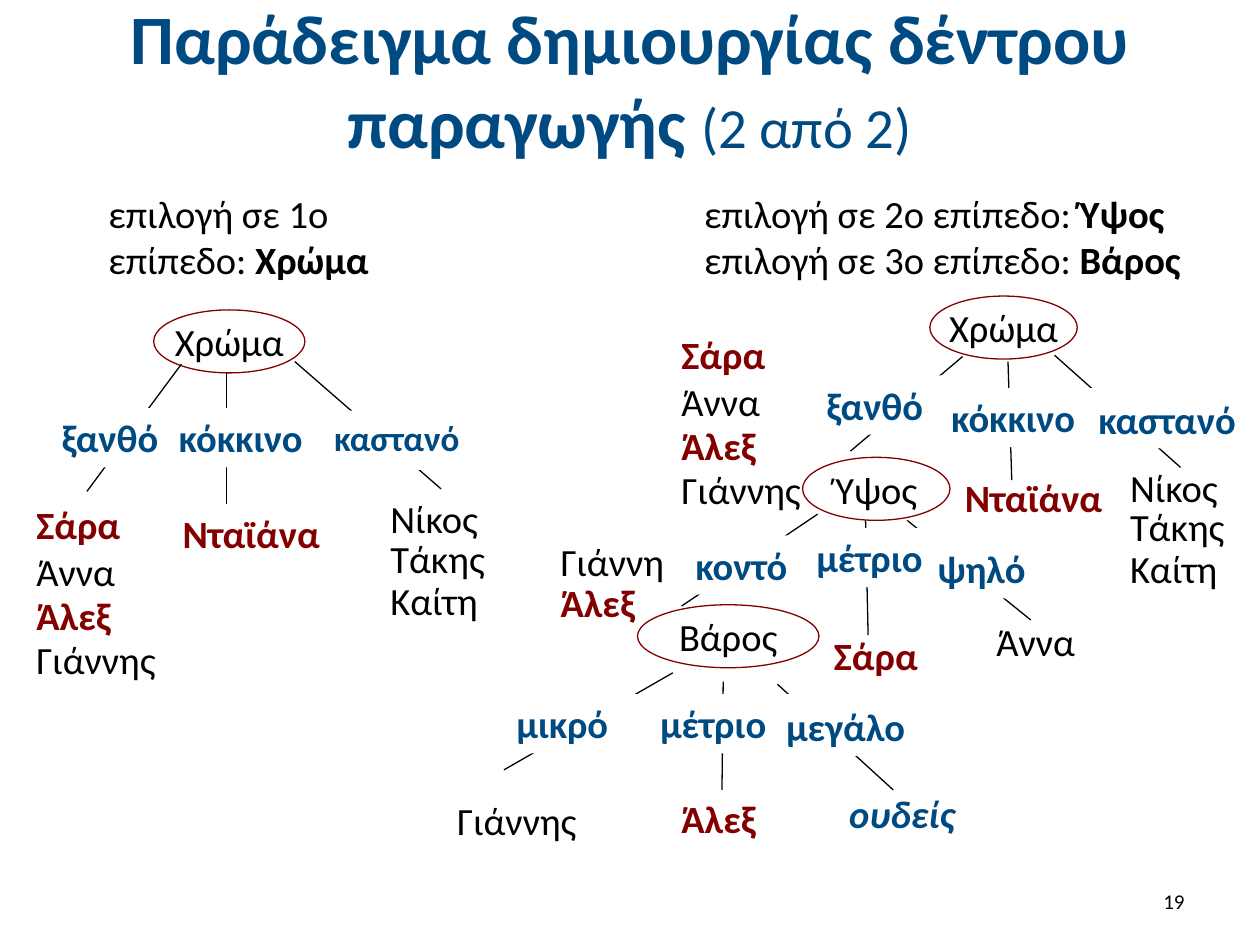
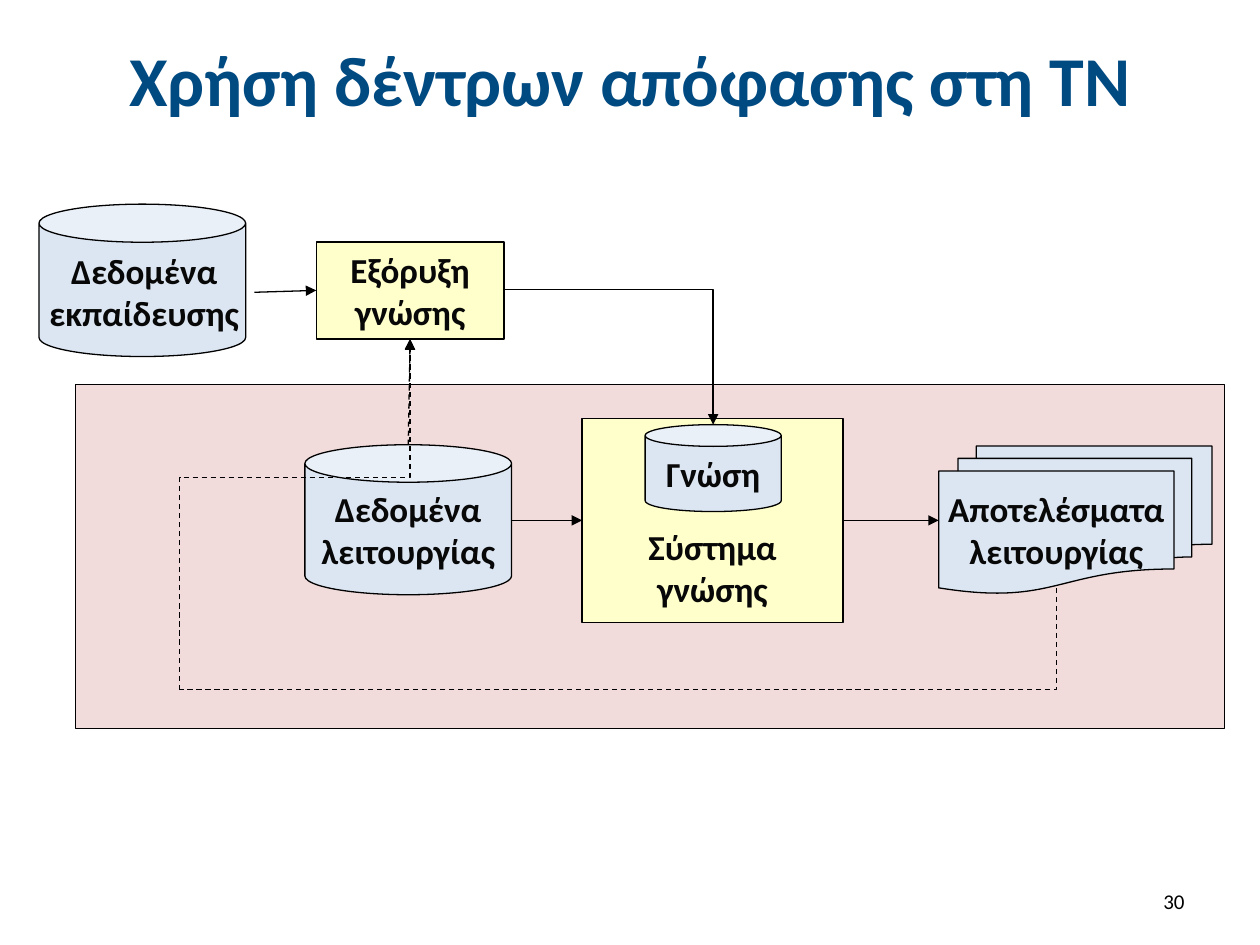
import pptx
import pptx.dml.color
import pptx.enum.dml
import pptx.enum.shapes
import pptx.enum.text
import pptx.oxml.ns
import pptx.oxml.xmlchemy
import pptx.util

EMU_PER_PX = 9144
BLUE, RED, BLACK, INK = "004A82", "820000", "000000", "080808"
WHITE, YELLOW, PINK, PALE_BLUE = "FFFFFF", "FFFFCC", "F2DCDB", "DCE6F2"
SHAPES = pptx.enum.shapes.MSO_SHAPE
CONNECTORS = pptx.enum.shapes.MSO_CONNECTOR
ANCHOR = pptx.enum.text.MSO_ANCHOR
ALIGN = pptx.enum.text.PP_ALIGN
TITLE_FORMAT = {"size": 40, "color": BLUE, "bold": True}
PLAIN_FORMAT = {"size": 22, "color": BLACK}
BOLD_FORMAT = {**PLAIN_FORMAT, "bold": True}
BRANCH_FORMAT = {"size": 22, "color": BLUE, "bold": True}
BOX_FORMAT = {"size": 20, "color": INK, "bold": True}
RED_NAMES = {"Σάρα", "Άλεξ", "Νταϊάνα"}

LONG_LIST = [("Σάρα", 0.8), ("Άννα", 0.5), ("Άλεξ", 0.5), ("Γιάννης", 0.5)]
SHORT_LIST = [("Νίκος", 1), ("Τάκης", 0.3), ("Καίτη", 0.5)]
DIANA = [("Νταϊάνα", 1)]

TREES = [
    {
        "box": (122, 246, 120, 50), "root": "Χρώμα",
        "edges": [(-53, 144, 22, 43), (58, 50, 58, 154), (112, 41, 228, 142)],
        "branches": [("ξανθό", -83, 78, 108, {}), ("κόκκινο", 10, 78, 126, {}),
                     ("καστανό", 130, 80, 126, {"size": 20})],
        "leaves": [(LONG_LIST, -103, 154, 120, 151), (DIANA, 13, 154, 132, 47),
                   (SHORT_LIST, 178, 142, 108, 114)],
    },
    {
        "box": (738, 235, 117, 50), "root": "Χρώμα",
        "edges": [(-63, 123, 26, 48), (62, 52, 65, 146), (99, 47, 199, 136)],
        "branches": [("ξανθό", -92, 63, 108, {}), ("κόκκινο", 7, 73, 125, {}),
                     ("καστανό", 124, 74, 133, {})],
        "leaves": [(LONG_LIST, -207, 30, 120, 151), (DIANA, 18, 136, 133, 47),
                   (SHORT_LIST, 149, 128, 108, 114)],
    },
    {
        "box": (637, 363, 117, 50), "root": "Ύψος",
        "edges": [(-96, 118, 12, 45), (50, 50, 52, 141), (83, 50, 181, 129)],
        "branches": [("κοντό", -95, 62, 108, {}), ("μέτριο", 1, 56, 108, {}),
                     ("ψηλό", 97, 65, 108, {})],
        "leaves": [([("Γιάννη", 0.6), ("Άλεξ", 0.4)], -202, 72, 119, 66),
                   ([("Σάρα", 0.8)], 15, 141, 100, 40),
                   ([("Άννα", 1)], 144, 123, 90, 47)],
    },
    {
        "box": (506, 480, 144, 50), "root": "Βάρος",
        "edges": [(-106, 131, 28, 54), (68, 61, 67, 147), (111, 63, 203, 147)],
        "branches": [("μικρό", -106, 71, 134, {}), ("μέτριο", 8, 71, 134, {}),
                     ("μεγάλο", 108, 73, 126, {})],
        "leaves": [([("Γιάννης", 1)], -153, 148, 120, 47),
                   ([("Άλεξ", 0.5)], 25, 162, 100, 29),
                   ([("ουδείς", 1)], 158, 142, 132, 47)],
    },
]


def px(*lengths):
    return [pptx.util.Emu(length * EMU_PER_PX) for length in lengths]


def rgb(color):
    return pptx.dml.color.RGBColor.from_string(color)


def make_element(tag, **attributes):
    element = pptx.oxml.xmlchemy.OxmlElement(tag)
    set_attributes(element, attributes)
    return element


def set_attributes(element, attributes):
    for name, value in attributes.items():
        element.set(name, value)


def set_values(target, values):
    for name, value in values.items():
        setattr(target, name, value)


def add_run(paragraph, text, text_format):
    run = paragraph.add_run()
    run.text = text
    values = {"name": "Calibri", "bold": False, **text_format}
    run.font.color.rgb = rgb(values.pop("color"))
    values["size"] = pptx.util.Pt(values["size"])
    set_values(run.font, values)


def write(shape, lines, align=ALIGN.LEFT, anchor=ANCHOR.TOP, wrap=True, spacings=()):
    frame = shape.text_frame
    set_values(frame, {"word_wrap": wrap, "vertical_anchor": anchor,
                       "auto_size": pptx.enum.text.MSO_AUTO_SIZE.NONE})
    for index, runs in enumerate(lines):
        paragraph = frame.add_paragraph() if index else frame.paragraphs[0]
        paragraph.alignment = align
        if spacings:
            paragraph.line_spacing = spacings[index]
            paragraph.space_before = pptx.util.Pt(12 if index else 0)
        for text, text_format in runs:
            add_run(paragraph, text, text_format)


def add_text(slide, box, lines, **options):
    shape = slide.shapes.add_textbox(*px(*box))
    write(shape, lines, **options)
    return shape


def add_box(slide, kind, box, fill=None, line=BLACK):
    shape = slide.shapes.add_shape(kind, *px(*box))
    shape.shadow.inherit = False
    if fill:
        shape.fill.solid()
        shape.fill.fore_color.rgb = rgb(fill)
    else:
        shape.fill.background()
    if line:
        shape.line.color.rgb = rgb(line)
        shape.line.width = pptx.util.Pt(0.75)
    else:
        shape.line.fill.background()
    return shape


def add_line(slide, ends, arrow=False, dashed=False, kind=CONNECTORS.STRAIGHT):
    connector = slide.shapes.add_connector(kind, *px(*ends))
    connector.line.color.rgb = rgb(BLACK)
    connector.line.width = pptx.util.Pt(0.75)
    if dashed:
        connector.line.dash_style = pptx.enum.dml.MSO_LINE.DASH
    if arrow:
        connector.get_or_add_ln().append(make_element("a:tailEnd", type="triangle"))
    connector.element.spPr.append(make_element("a:effectLst"))
    return connector


def add_elbow(slide, box, preset, turn=None, bend=None, **options):
    left, top, width, height = box
    connector = add_line(slide, (left, top, left + width, top + height),
                         kind=CONNECTORS.ELBOW, **options)
    properties = connector.element.spPr
    set_attributes(properties.find(pptx.oxml.ns.qn("a:xfrm")), turn or {})
    geometry = properties.find(pptx.oxml.ns.qn("a:prstGeom"))
    geometry.set("prst", preset)
    if bend:
        adjustments = geometry.find(pptx.oxml.ns.qn("a:avLst"))
        adjustments.append(make_element("a:gd", name="adj1", fmla=f"val {bend}"))


def place(placeholder, box):
    set_values(placeholder, dict(zip(("left", "top", "width", "height"), px(*box))))


def start_slide(presentation, layout, title_runs, number):
    slide = presentation.slides.add_slide(presentation.slide_layouts[layout])
    place(slide.shapes.title, (0, 13, 1000, 99))
    write(slide.shapes.title, [title_runs], align=ALIGN.CENTER, anchor=ANCHOR.MIDDLE)
    add_text(slide, (717, 695, 233, 40), [[(number, {"size": 12, "color": BLACK})]],
             align=ALIGN.RIGHT, anchor=ANCHOR.MIDDLE)
    return slide


def leaf_format(name):
    if name == "ουδείς":
        return {**BRANCH_FORMAT, "italic": True}
    return {**BOLD_FORMAT, "color": RED} if name in RED_NAMES else PLAIN_FORMAT


def draw_tree(slide, box, root, edges, branches, leaves):
    left, top = box[:2]
    oval = add_box(slide, SHAPES.OVAL, box, line=RED)
    write(oval, [[(root, PLAIN_FORMAT)]], align=ALIGN.CENTER, anchor=ANCHOR.MIDDLE, wrap=False)
    for x1, y1, x2, y2 in edges:
        add_line(slide, (left + x1, top + y1, left + x2, top + y2))
    for text, x, y, width, changes in branches:
        label = add_box(slide, SHAPES.RECTANGLE, (left + x, top + y, width, 47), WHITE, None)
        write(label, [[(text, {**BRANCH_FORMAT, **changes})]],
              align=ALIGN.CENTER if changes else ALIGN.LEFT)
    for names, x, y, width, height in leaves:
        add_text(slide, (left + x, top + y, width, height),
                 [[(name, leaf_format(name))] for name, _ in names],
                 spacings=[spacing for _, spacing in names])


def build_tree_slide(presentation):
    title = [("Παράδειγμα δημιουργίας δέντρου παραγωγής ", {**TITLE_FORMAT, "size": 39.6}),
             ("(2 από 2)", {"size": 32.4, "color": BLUE})]
    slide = start_slide(presentation, 1, title, "19")
    body = slide.placeholders[1]
    place(body, (76, 146, 277, 94))
    paragraph = body.text_frame.paragraphs[0]
    properties = paragraph._p.get_or_add_pPr()
    set_attributes(properties, {"marL": "0", "indent": "0"})
    properties.append(make_element("a:buNone"))
    paragraph.space_before = pptx.util.Pt(0)
    write(body, [[("επιλογή σε 1ο επίπεδο: ", PLAIN_FORMAT), ("Χρώμα", BOLD_FORMAT)]])
    add_text(slide, (549, 146, 410, 84),
             [[(f"επιλογή σε {level} επίπεδο: ", PLAIN_FORMAT), (choice, BOLD_FORMAT)]
              for level, choice in (("2ο", "Ύψος"), ("3ο", "Βάρος"))])
    for tree in TREES:
        draw_tree(slide, **tree)


def draw_knowledge_flow(slide, box):
    left, top, width, height = box

    def inside(x, y, *size):
        return (left + x, top + y, *size)

    def ends(x1, y1, x2, y2):
        return (left + x1, top + y1, left + x2, top + y2)

    def labelled(kind, part_box, fill, *lines, **options):
        shape = add_box(slide, kind, inside(*part_box), fill)
        if lines:
            write(shape, [[(line, BOX_FORMAT)] for line in lines],
                  align=ALIGN.CENTER, **options)
        return shape

    centred = {"anchor": ANCHOR.MIDDLE, "wrap": False}
    labelled(SHAPES.RECTANGLE, (29, 143, width - 29, height - 143), PINK)
    mining = labelled(SHAPES.RECTANGLE, (220, 30, 149, 77), YELLOW, "Εξόρυξη γνώσης")
    labelled(SHAPES.CAN, (0, 0, 164, 121), PALE_BLUE)
    add_text(slide, inside(-4, 31, 175, 77), [[("Δεδομένα εκπαίδευσης", BOX_FORMAT)]],
             align=ALIGN.CENTER)
    labelled(SHAPES.CAN, (211, 191, 164, 119), PALE_BLUE, "Δεδομένα", "λειτουργίας", **centred)
    system = labelled(SHAPES.RECTANGLE, (431, 170, 207, 162), YELLOW, "Σύστημα γνώσης",
                      anchor=ANCHOR.BOTTOM)
    system.text_frame.margin_bottom = px(10)[0]
    labelled(SHAPES.CAN, (481, 175, 108, 69), PALE_BLUE, "Γνώση", **centred)
    add_line(slide, ends(171, 70, 220, 68), arrow=True).end_connect(mining, 1)
    add_line(slide, ends(375, 251, 431, 251), arrow=True).end_connect(system, 1)
    add_elbow(slide, inside(368, 68, 167, 107), "bentConnector2", arrow=True)
    labelled(SHAPES.FLOWCHART_MULTIDOCUMENT, (714, 192, 217, 117), PALE_BLUE,
             "Αποτελέσματα", "λειτουργίας", **centred)
    add_line(slide, ends(638, 251, 714, 251), arrow=True).begin_connect(system, 3)
    add_line(slide, ends(293, 191, 294, 107), arrow=True, dashed=True).end_connect(mining, 2)
    add_elbow(slide, inside(419, -3, 81, 696), "bentConnector2", {"rot": "5400000"}, dashed=True)
    add_elbow(slide, inside(64, 155, 278, 183), "bentConnector3",
              {"rot": "5400000", "flipH": "1", "flipV": "1"}, 60700, arrow=True, dashed=True)


def build_usage_slide(presentation):
    slide = start_slide(presentation, 5, [("Χρήση δέντρων απόφασης στη ΤΝ", TITLE_FORMAT)], "30")
    draw_knowledge_flow(slide, (31, 162, 941, 416))


def main():
    presentation = pptx.Presentation()
    presentation.slide_width, presentation.slide_height = px(1000, 750)
    build_tree_slide(presentation)
    build_usage_slide(presentation)
    presentation.save("out.pptx")


if __name__ == "__main__":
    main()
